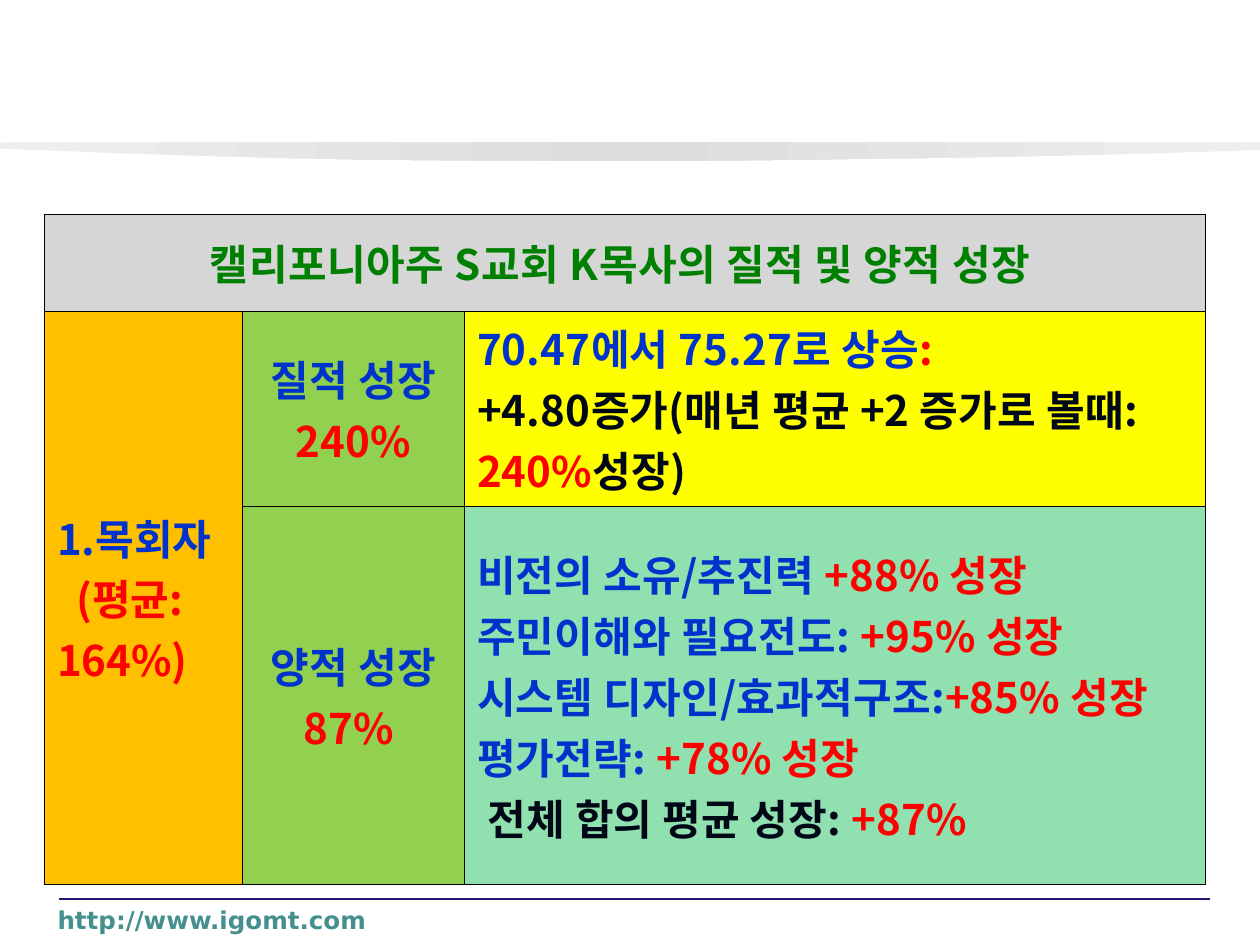
from lxml import etree
from pptx import Presentation
from pptx.dml.color import RGBColor
from pptx.enum.shapes import MSO_CONNECTOR
from pptx.enum.text import MSO_ANCHOR, PP_ALIGN
from pptx.oxml.ns import qn
from pptx.util import Pt

LEFT, CENTER = PP_ALIGN.LEFT, PP_ALIGN.CENTER
MIDDLE = MSO_ANCHOR.MIDDLE
STRAIGHT = MSO_CONNECTOR.STRAIGHT

COLORS = {
    "green": "008000", "blue": "0033CC", "red": "FF0000", "dark": "000818",
    "teal": "458F8F", "rule": "2B166E", "border": "000000",
    "gray": "D6D6D6", "orange": "FFC000", "lime": "92D050",
    "yellow": "FFFF00", "mint": "91E0AF",
    "edge": "EEEEEE", "middle": "DDDDDD",
}
C = {name: RGBColor.from_string(value) for name, value in COLORS.items()}


def write(tf, paragraphs, size=24, font="Noto Sans CJK KR", align=LEFT, margin=0,
          indents=(), spacing=0):
    for i, runs in enumerate(paragraphs):
        p = tf.paragraphs[0] if i == 0 else tf.add_paragraph()
        p.alignment = align
        pPr = p._p.get_or_add_pPr()
        pPr.set("marL", str(Pt(margin)))
        pPr.set("indent", str(Pt(indents[i] if indents else 0)))
        for text, color in runs:
            r = p.add_run()
            r.text = text
            r.font.size = Pt(size)
            r.font.bold = True
            r.font.name = font
            r.font.color.rgb = C[color]
            rPr = r._r.get_or_add_rPr()
            rPr.set("spc", str(spacing))
            etree.SubElement(rPr, qn("a:ea"), typeface=font)


prs = Presentation()
prs.slide_width, prs.slide_height = Pt(720), Pt(540)
s = prs.slides.add_slide(prs.slide_layouts[6])

curves = [
    [(0, 85), (38, 86.4), (147, 90.7), (230, 91.4)],
    [(230, 91.4), (312, 92.2), (415, 92.2), (496, 90.7)],
    [(496, 90.7), (578, 90), (683, 87.1), (720.5, 85.7)],
]
points = [(0, 85)]
for curve in curves:
    for step in range(1, 13):
        t = step / 12
        weights = [(1 - t) ** 3, 3 * t * (1 - t) ** 2, 3 * t ** 2 * (1 - t), t ** 3]
        points.append([sum(w * pt[axis] for w, pt in zip(weights, curve)) for axis in (0, 1)])
points.append((720.5, 81.4))
builder = s.shapes.build_freeform(Pt(0.5), Pt(81.4))
builder.add_line_segments([(Pt(x), Pt(y)) for x, y in points])
sp = builder.convert_to_shape()
sp.shadow.inherit = False
sp.line.fill.background()
sp.fill.gradient()
sp.fill.gradient_angle = 0
stops = sp.fill.gradient_stops
for stop, position in zip(stops, (0, 1)):
    stop.position = position
    stop.color.rgb = C["edge"]
gsLst = sp._element.spPr.find(qn("a:gradFill")).find(qn("a:gsLst"))
gs = etree.Element(qn("a:gs"), pos="50000")
etree.SubElement(gs, qn("a:srgbClr"), val=COLORS["middle"])
gsLst.insert(1, gs)

line = s.shapes.add_connector(STRAIGHT, Pt(33.8), Pt(513.75), Pt(691.2), Pt(513.75))
line.line.color.rgb = C["rule"]
line.line.width = Pt(0.75)
etree.SubElement(line._element.spPr, qn("a:effectLst"))

widths = [113, 127, 423.5]
heights = [55.5, 111.5, 216]
frame = s.shapes.add_table(3, 3, Pt(25.4), Pt(122.2), Pt(sum(widths)), Pt(sum(heights)))
table = frame.table
for column, width in zip(table.columns, widths):
    column.width = Pt(width)
for row, height in zip(table.rows, heights):
    row.height = Pt(height)

fills = [["gray"] * 3, ["orange", "lime", "yellow"], ["orange", "lime", "mint"]]
for i, names in enumerate(fills):
    for j, name in enumerate(names):
        cell = table.cell(i, j)
        cell.vertical_anchor = MIDDLE
        tcPr = cell._tc.get_or_add_tcPr()
        for side in ("lnL", "lnR", "lnT", "lnB"):
            ln = etree.SubElement(tcPr, qn("a:" + side), w=str(Pt(0.28)))
            solid = etree.SubElement(ln, qn("a:solidFill"))
            etree.SubElement(solid, qn("a:srgbClr"), val=COLORS["border"])
        cell.fill.solid()
        cell.fill.fore_color.rgb = C[name]
table.cell(0, 0).merge(table.cell(0, 2))
table.cell(1, 0).merge(table.cell(2, 0))
for i in (1, 2):
    table.cell(i, 2).margin_right = Pt(12)

contents = [
    (0, 0, [[("캘리포니아주 S교회 K목사의 질적 및 양적 성장 ", "green")]],
     {"align": CENTER, "spacing": 28}),
    (1, 0, [[("1.목회자", "blue")], [("(평균:", "red")], [("164%)", "red")]],
     {"margin": 27, "indents": (-27, -16, -27)}),
    (1, 1, [[("질적 성장", "blue")], [("240%", "red")]], {"align": CENTER, "spacing": 15}),
    (2, 1, [[("양적 성장", "blue")], [("87% ", "red")]], {"align": CENTER, "spacing": 15}),
    (1, 2, [
        [("70.47에서 75.27로 상승", "blue"), (":", "red")],
        [("+4.80증가(매년 평균 +2 증가로 볼때: ", "dark"), ("240%", "red"), ("성장)", "dark")],
    ], {"spacing": 13}),
    (2, 2, [
        [("비전의 소유/추진력 ", "blue"), ("+88% 성장", "red")],
        [("주민이해와 필요전도: ", "blue"), ("+95% 성장", "red")],
        [("시스템 디자인/효과적구조:", "blue"), ("+85% 성장", "red")],
        [("평가전략: ", "blue"), ("+78% 성장", "red")],
        [("전체 합의 평균 성장: ", "dark"), ("+87%", "red")],
    ], {"indents": (0, 0, 0, 0, 6), "spacing": 13}),
]
for i, j, paragraphs, style in contents:
    write(table.cell(i, j).text_frame, paragraphs, **style)

sp = s.shapes.add_textbox(Pt(25.8), Pt(513.5), Pt(323), Pt(21))
tf = sp.text_frame
tf.word_wrap = True
write(tf, [[("http://www.igomt.com", "teal")]], size=14, font="DejaVu Sans",
      margin=27, indents=(-27,))

prs.save("out.pptx")
